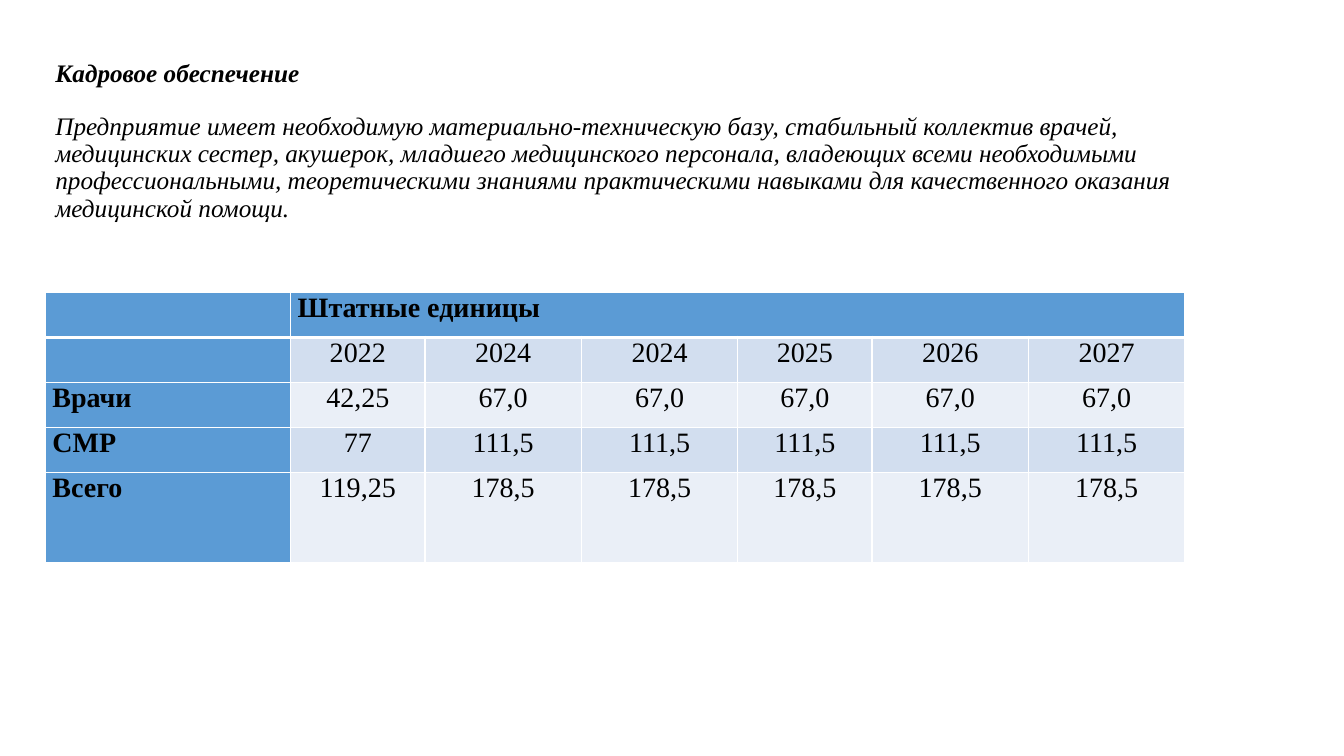
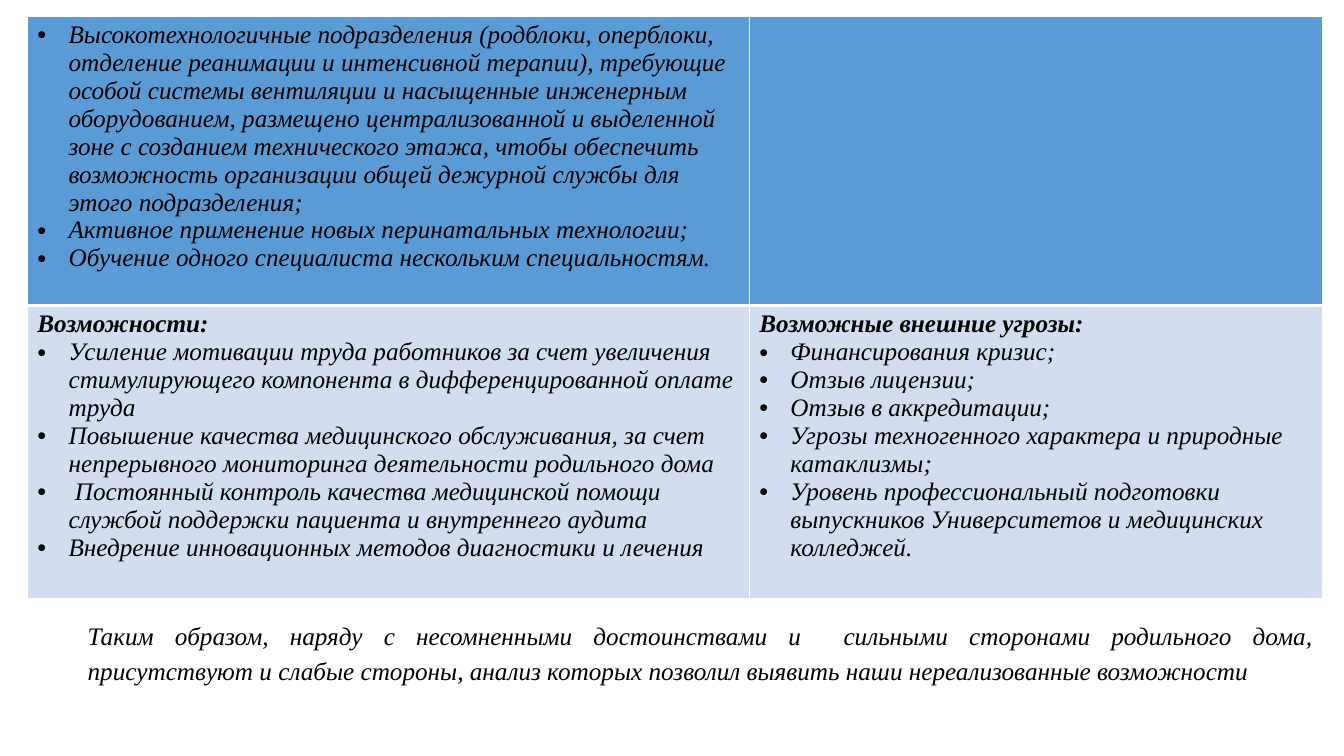
from dataclasses import dataclass
from typing import Any, Optional

import pptx
import pptx.dml.color
import pptx.enum.text
import pptx.oxml
import pptx.oxml.ns
import pptx.util

ALIGN = pptx.enum.text.PP_ALIGN
SLIDE_WIDTH = pptx.util.Inches(13.33)
SLIDE_HEIGHT = pptx.util.Inches(7.5)
FONT = "Times New Roman"
INK = "000000"
WHITE = "FFFFFF"
HEADER_BLUE = "5B9BD5"
BAND_DARK = "D2DEEF"
BAND_LIGHT = "EAEFF7"
BODY_SIZE = 18
FIGURE_SIZE = 20
BULLET_INDENT = pptx.util.Inches(0.31)
FIGURE_INSETS = (0.07, 0)
TEXT_INSETS = (0.1, 0.05)
THIN, THICK = 1, 3


@dataclass(frozen=True)
class Area:
    """Position and size in percent of the slide."""
    left: float
    top: float
    width: float
    height: float


@dataclass(frozen=True)
class Line:
    """One paragraph with its look."""
    text: str
    size: int = BODY_SIZE
    bold: bool = False
    italic: bool = True
    align: Any = ALIGN.LEFT
    bullet: bool = False
    indent: float = 0
    spacing: float = 1.0
    before: float = 0


@dataclass(frozen=True)
class Cell:
    fill: str
    lines: tuple[Line, ...] = ()


def across(percent: float) -> int:
    return round(SLIDE_WIDTH * percent / 100)


def down(percent: float) -> int:
    return round(SLIDE_HEIGHT * percent / 100)


def colour(value: str) -> Any:
    return pptx.dml.color.RGBColor.from_string(value)


def add_element(parent: Any, xml: str) -> None:
    namespace = pptx.oxml.ns.nsdecls("a")
    parent.append(pptx.oxml.parse_xml(xml.replace(" ", f" {namespace} ", 1)))


def write_line(paragraph: Any, line: Line) -> None:
    paragraph.alignment = line.align
    paragraph.line_spacing = line.spacing
    paragraph.space_before = pptx.util.Pt(line.before)
    properties = paragraph._p.get_or_add_pPr()
    if line.bullet:
        properties.set("marL", str(BULLET_INDENT))
        properties.set("indent", str(-BULLET_INDENT))
        add_element(properties, '<a:buFont typeface="Arial"/>')
        add_element(properties, '<a:buChar char="•"/>')
    elif line.indent:
        properties.set("marL", str(pptx.util.Inches(line.indent)))
    run = paragraph.add_run()
    run.text = line.text
    run.font.name = FONT
    run.font.size = pptx.util.Pt(line.size)
    run.font.bold = line.bold
    run.font.italic = line.italic
    run.font.color.rgb = colour(INK)


def write_lines(frame: Any, lines: tuple[Line, ...]) -> None:
    for index, line in enumerate(lines):
        paragraph = frame.add_paragraph() if index else frame.paragraphs[0]
        write_line(paragraph, line)


def add_text(slide: Any, area: Area, lines: tuple[Line, ...]) -> None:
    box = slide.shapes.add_textbox(across(area.left), down(area.top),
                                   across(area.width), down(area.height))
    box.text_frame.word_wrap = True
    write_lines(box.text_frame, lines)


def style_cell(target: Any, fill: str, row: int, insets: tuple[float, float]) -> None:
    """Set white borders, with a thick rule under the first row."""
    target.margin_left = target.margin_right = pptx.util.Inches(insets[0])
    target.margin_top = target.margin_bottom = pptx.util.Inches(insets[1])
    properties = target._tc.get_or_add_tcPr()
    widths = {"L": THIN, "R": THIN,
              "T": THICK if row == 1 else THIN,
              "B": THICK if row == 0 else THIN}
    for side, width in widths.items():
        add_element(properties,
                    f'<a:ln{side} w="{pptx.util.Pt(width)}"><a:solidFill>'
                    f'<a:srgbClr val="{WHITE}"/></a:solidFill></a:ln{side}>')
    target.fill.solid()
    target.fill.fore_color.rgb = colour(fill)


def add_grid(slide: Any, area: Area, column_weights: tuple[float, ...],
             row_weights: tuple[float, ...], rows: list[list[Cell]],
             insets: tuple[float, float], header_span: Optional[tuple[int, int]] = None) -> None:
    """Share the area by weights; header_span merges columns of the first row."""
    table = slide.shapes.add_table(
        len(rows), len(column_weights), across(area.left), down(area.top),
        across(area.width), down(area.height)).table
    table.first_row = table.horz_banding = False
    for column, weight in zip(table.columns, column_weights):
        column.width = across(area.width * weight / sum(column_weights))
    for row, weight in zip(table.rows, row_weights):
        row.height = down(area.height * weight / sum(row_weights))
    for row_index, cells in enumerate(rows):
        for column_index, cell in enumerate(cells):
            target = table.cell(row_index, column_index)
            style_cell(target, cell.fill, row_index, insets)
            write_lines(target.text_frame, cell.lines)
    if header_span:
        table.cell(0, header_span[0]).merge(table.cell(0, header_span[1]))


def bullets(*texts: str) -> tuple[Line, ...]:
    return tuple(Line(text, bullet=True) for text in texts)


def label_cell(text: str) -> Cell:
    lines = (Line(text, FIGURE_SIZE, bold=True, italic=False, align=ALIGN.JUSTIFY),)
    return Cell(HEADER_BLUE, lines if text else ())


def figure_cell(text: str, fill: str) -> Cell:
    return Cell(fill, (Line(text, FIGURE_SIZE, italic=False, align=ALIGN.CENTER),))


def build_staffing(slide: Any) -> None:
    add_text(slide, Area(3.38, 7.33, 89.8, 22), (
        Line("Кадровое обеспечение", bold=True, spacing=0.9),
        Line("Предприятие имеет необходимую материально-техническую базу, стабильный "
             "коллектив врачей, медицинских сестер, акушерок, младшего медицинского "
             "персонала, владеющих всеми необходимыми профессиональными, теоретическими "
             "знаниями практическими навыками для качественного оказания медицинской "
             "помощи.", spacing=0.9, before=18.6),
    ))
    staff_units = (
        ("", ("2022", "2024", "2024", "2025", "2026", "2027")),
        ("Врачи", ("42,25",) + ("67,0",) * 5),
        ("СМР", ("77",) + ("111,5",) * 5),
        ("Всего", ("119,25",) + ("178,5",) * 5),
    )
    header = [label_cell(text) for text in ("", "Штатные единицы", "", "", "", "", "")]
    rows = [header]
    for index, (label, figures) in enumerate(staff_units):
        band = BAND_LIGHT if index % 2 else BAND_DARK
        rows.append([label_cell(label)] + [figure_cell(text, band) for text in figures])
    add_grid(slide, Area(3.38, 38.67, 84.8, 35.8),
             (2.43, 1.33, 1.55, 1.55, 1.33, 1.55, 1.55), (1, 1, 1, 1, 2),
             rows, FIGURE_INSETS, header_span=(1, 6))


def build_swot(slide: Any) -> None:
    strengths = bullets(
        "Высокотехнологичные подразделения (родблоки, оперблоки, отделение реанимации и "
        "интенсивной терапии), требующие особой системы вентиляции и насыщенные "
        "инженерным оборудованием, размещено централизованной и выделенной зоне с "
        "созданием технического этажа, чтобы обеспечить возможность организации общей "
        "дежурной службы для этого подразделения;",
        "Активное применение новых перинатальных технологии;",
        "Обучение одного специалиста нескольким специальностям.")
    opportunities = (Line("Возможности:", bold=True),) + bullets(
        "Усиление мотивации труда работников за счет увеличения стимулирующего "
        "компонента в дифференцированной оплате труда",
        "Повышение качества медицинского обслуживания, за счет непрерывного мониторинга "
        "деятельности родильного дома",
        " Постоянный контроль качества медицинской помощи службой поддержки пациента и "
        "внутреннего аудита",
        "Внедрение инновационных методов диагностики и лечения")
    threats = (Line("Возможные внешние угрозы:", bold=True),) + bullets(
        "Финансирования кризис;",
        "Отзыв лицензии;",
        "Отзыв в аккредитации;",
        "Угрозы техногенного характера и природные катаклизмы;",
        "Уровень профессиональный подготовки выпускников Университетов и медицинских "
        "колледжей.")
    rows = [[Cell(HEADER_BLUE, strengths), Cell(HEADER_BLUE)],
            [Cell(BAND_DARK, opportunities), Cell(BAND_DARK, threats)]]
    add_grid(slide, Area(2.03, 2.13, 96.4, 77.07), (7.16, 5.69), (2.87, 2.91),
             rows, TEXT_INSETS)
    add_text(slide, Area(2.03, 80.8, 96.4, 10.67), (
        Line("Таким образом, наряду с несомненными достоинствами и  сильными сторонами "
             "родильного дома, присутствуют и слабые стороны, анализ которых позволил "
             "выявить наши нереализованные возможности",
             align=ALIGN.JUSTIFY, indent=0.5, spacing=1.15),
    ))


def main() -> None:
    deck = pptx.Presentation()
    deck.slide_width = SLIDE_WIDTH
    deck.slide_height = SLIDE_HEIGHT
    blank = deck.slide_layouts[6]
    for build in (build_staffing, build_swot):
        build(deck.slides.add_slide(blank))
    deck.save("out.pptx")


if __name__ == "__main__":
    main()
